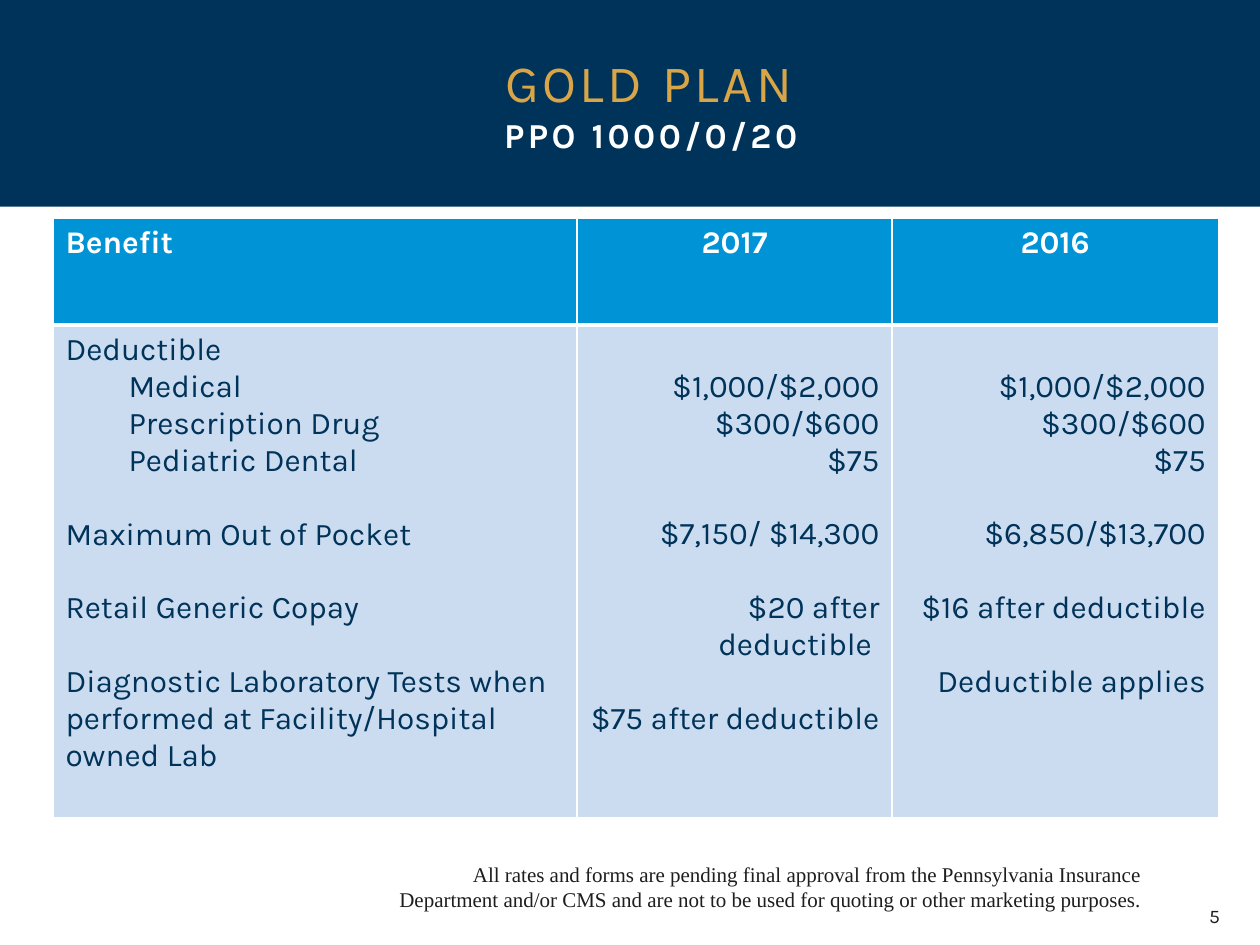
from lxml.etree import SubElement
from pptx import Presentation
from pptx.dml.color import RGBColor
from pptx.enum.shapes import MSO_SHAPE
from pptx.enum.text import MSO_ANCHOR, PP_ALIGN
from pptx.oxml.ns import qn
from pptx.util import Inches, Pt

NAVY = RGBColor(0x00, 0x33, 0x59)
GOLD = RGBColor(0xD9, 0xA5, 0x47)
BLUE = RGBColor(0x00, 0x94, 0xD7)
PALE = RGBColor(0xCC, 0xDC, 0xF0)
WHITE = RGBColor(0xFF, 0xFF, 0xFF)
INK = RGBColor(0x1E, 0x1E, 0x1E)

FONT = "Karla"
TEXT_SIZE = 18
LINE = TEXT_SIZE * 1.17
TITLE = [("GOLD PLAN", 30, GOLD, False), ("PPO 1000/0/20", 20, WHITE, True)]
HEADERS = ["Benefit", "2017", "2016"]
BENEFITS = [
    ["Deductible", ("Medical", "Prescription Drug", "Pediatric Dental")],
    ["Maximum Out of Pocket", ()],
    ["Retail Generic Copay", ()],
    ["Diagnostic Laboratory Tests when performed at Facility/Hospital owned Lab", ()],
]
AMOUNTS = [
    [["$1,000/$2,000", "$300/$600", "$75"], ["$7,150/ $14,300"],
     ["$20 after deductible "], ["$75 after deductible"]],
    [["$1,000/$2,000", "$300/$600", "$75"], ["$6,850/$13,700"],
     ["$16 after deductible"], ["Deductible applies"]],
]
COLUMN_WIDTHS = [4.16, 2.5, 2.59]
ROW_HEIGHTS = [0.85, 3.91]
NOTICE = ("All rates and forms are pending final approval from the Pennsylvania Insurance "
          "Department and/or CMS and are not to be used for quoting or other marketing purposes.")
FOOTERS = [
    (NOTICE, (2.95, 6.79, 6.21, 0.5), "Times New Roman", 12, PP_ALIGN.RIGHT),
    ("5", (9.32, 7.12, 0.64, 0.3), FONT, 11, PP_ALIGN.CENTER),
]


def set_font(font, size, color, bold=False, name=FONT):
    font.name, font.size, font.bold = name, Pt(size), bold
    font.color.rgb = color


def add_title(slide):
    title = slide.shapes.title
    title.left, title.top, title.width, title.height = map(Inches, (0.66, 0.35, 9.01, 1.3))
    frame = title.text_frame
    frame.word_wrap = True
    frame.vertical_anchor = MSO_ANCHOR.TOP
    paragraph = frame.paragraphs[0]
    paragraph.alignment = PP_ALIGN.CENTER
    for index, (text, size, color, bold) in enumerate(TITLE):
        if index:
            paragraph.add_line_break()
        run = paragraph.add_run()
        run.text = text
        set_font(run.font, size, color, bold)
        run.font._element.set("spc", "200")


def style_cell(cell, fill, bottom):
    properties = cell._tc.get_or_add_tcPr()
    for side, width in (("L", 1), ("R", 1), ("T", 1), ("B", bottom)):
        line = SubElement(properties, qn(f"a:ln{side}"), w=str(Pt(width)))
        SubElement(SubElement(line, qn("a:solidFill")), qn("a:srgbClr"), val=str(WHITE))
    cell.fill.solid()
    cell.fill.fore_color.rgb = fill


def fill_cell(cell, lines, color, alignment, bold=False):
    for index, (text, indent, gap) in enumerate(lines):
        frame = cell.text_frame
        paragraph = frame.add_paragraph() if index else frame.paragraphs[0]
        paragraph.text = text
        paragraph.alignment = alignment
        if indent:
            paragraph.level = 1
            properties = paragraph._p.get_or_add_pPr()
            properties.set("marL", str(Inches(indent)))
            properties.set("indent", "0")
        if gap:
            paragraph.space_before = Pt(gap)
        set_font(paragraph.font, TEXT_SIZE, color, bold)


def benefit_lines():
    for group, (name, details) in enumerate(BENEFITS):
        yield name, 0, LINE if group else 0
        for detail in details:
            yield detail, 0.5, 0


def amount_lines(groups):
    for group, amounts in enumerate(groups):
        for index, amount in enumerate(amounts):
            yield amount, 0, LINE if group and not index else 0


def add_benefit_table(slide):
    frame = slide.shapes.add_table(
        2, 3, Inches(0.42), Inches(1.73), Inches(sum(COLUMN_WIDTHS)), Inches(sum(ROW_HEIGHTS)))
    table = frame.table
    for row, height in zip(table.rows, ROW_HEIGHTS):
        row.height = Inches(height)
    bodies = [benefit_lines(), *map(amount_lines, AMOUNTS)]
    for index, (width, header, body) in enumerate(zip(COLUMN_WIDTHS, HEADERS, bodies)):
        table.columns[index].width = Inches(width)
        top, bottom = table.cell(0, index), table.cell(1, index)
        style_cell(top, BLUE, 3)
        style_cell(bottom, PALE, 1)
        fill_cell(top, [(header, 0, 0)], WHITE,
                  PP_ALIGN.CENTER if index else PP_ALIGN.LEFT, True)
        fill_cell(bottom, body, NAVY, PP_ALIGN.RIGHT if index else PP_ALIGN.LEFT)
        if index:
            bottom.margin_top = Inches(0.05) + Pt(LINE)


def add_footer(slide, text, place, name, size, alignment):
    frame = slide.shapes.add_textbox(*map(Inches, place)).text_frame
    frame.word_wrap = True
    frame.vertical_anchor = MSO_ANCHOR.MIDDLE
    paragraph = frame.paragraphs[0]
    paragraph.text = text
    paragraph.alignment = alignment
    set_font(paragraph.font, size, INK, name=name)


def main():
    presentation = Presentation()
    presentation.slide_width, presentation.slide_height = Inches(10), Inches(7.5)
    slide = presentation.slides.add_slide(presentation.slide_layouts[5])
    band = slide.shapes.add_shape(
        MSO_SHAPE.RECTANGLE, 0, 0, presentation.slide_width, Inches(1.64))
    band.shadow.inherit = False
    band.fill.solid()
    band.fill.fore_color.rgb = NAVY
    band.line.fill.background()
    slide.shapes._spTree.insert(2, band._element)
    add_title(slide)
    add_benefit_table(slide)
    for footer in FOOTERS:
        add_footer(slide, *footer)
    presentation.save("out.pptx")


if __name__ == "__main__":
    main()
